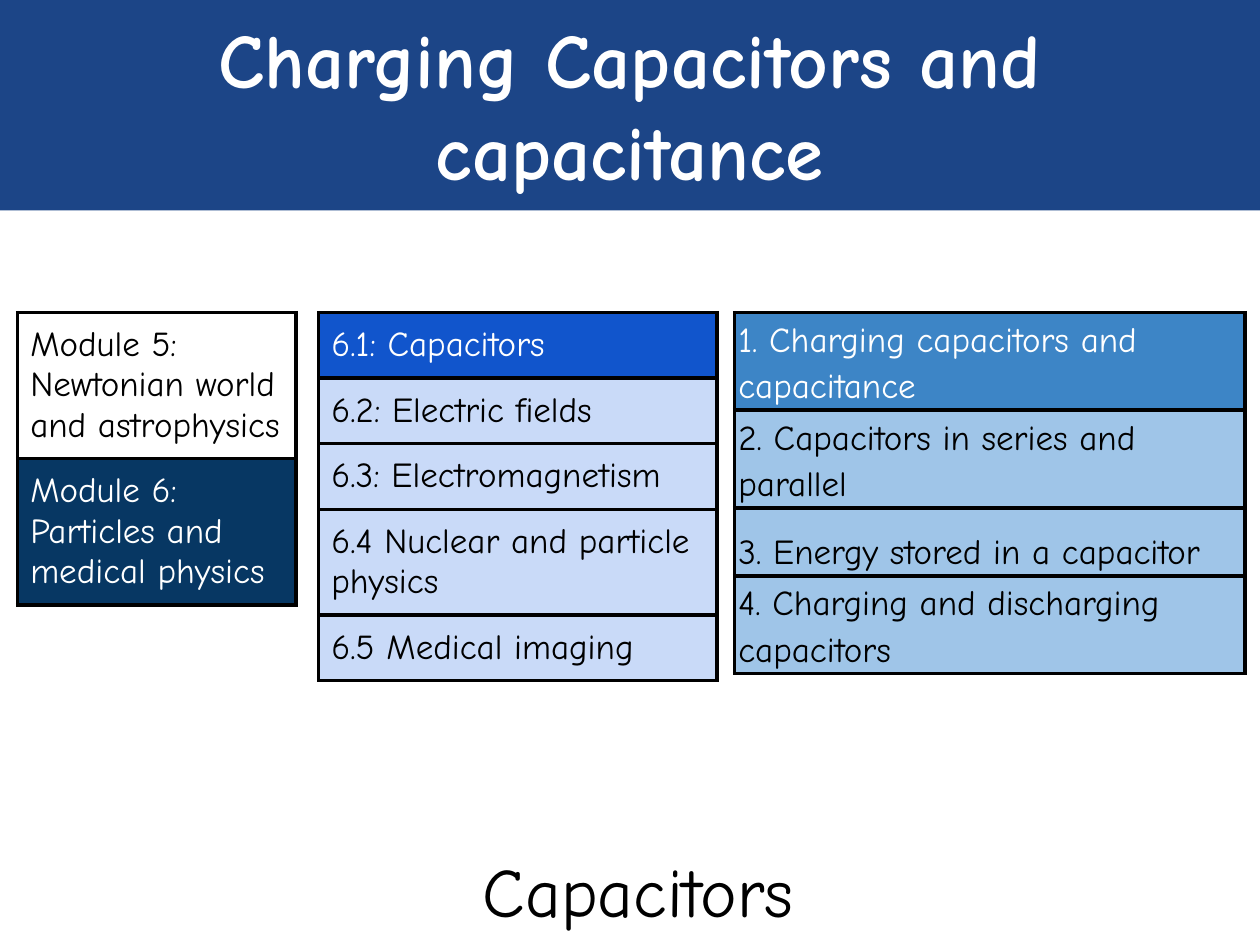
from dataclasses import dataclass

from lxml.etree import SubElement
from pptx import Presentation
from pptx.dml.color import RGBColor
from pptx.enum.text import MSO_ANCHOR, MSO_AUTO_SIZE, PP_ALIGN
from pptx.oxml.ns import qn
from pptx.util import Inches, Pt

FONT_NAME = "Comic Neue"
BLACK = "000000"
WHITE = "FFFFFF"
TABLE_TOP = 2.48
BORDER_WIDTH = 2.25


@dataclass(frozen=True)
class Row:
    text: str
    height: float
    fill: str
    color: str = BLACK


@dataclass(frozen=True)
class TopicTable:
    left: float
    width: float
    rows: tuple[Row, ...]
    margin_x: float = 0.1
    margin_y: float = 0.1
    anchor: MSO_ANCHOR = MSO_ANCHOR.TOP
    line_spacing: float = 1.0


TABLES = (
    TopicTable(0.14, 2.21, (
        Row("Module 5: Newtonian world and astrophysics", 0.42, WHITE),
        Row("Module 6: Particles and medical physics", 0.42, "073763", WHITE),
    )),
    TopicTable(2.53, 3.16, (
        Row("6.1: Capacitors", 0.49, "1155CC", WHITE),
        Row("6.2: Electric fields", 0.42, "C9DAF8"),
        Row("6.3: Electromagnetism", 0.42, "C9DAF8"),
        Row("6.4 Nuclear and particle physics", 0.42, "C9DAF8"),
        Row("6.5 Medical imaging", 0.42, "C9DAF8"),
    )),
    TopicTable(5.83, 4.05, (
        Row("1. Charging capacitors and capacitance", 0.5, "3D85C6", WHITE),
        Row("2. Capacitors in series and parallel", 0.42, "9FC5E8"),
        Row("3. Energy stored in a capacitor", 0.54, "9FC5E8"),
        Row("4. Charging and discharging capacitors", 0.42, "9FC5E8"),
    ), 0.03, 0.02, MSO_ANCHOR.BOTTOM, 1.15),
)


def set_fill(target, color: str) -> None:
    target.fill.solid()
    target.fill.fore_color.rgb = RGBColor.from_string(color)


def set_text(text_frame, text: str, size: float, color: str, bold: bool = False):
    text_frame.text = text
    paragraph = text_frame.paragraphs[0]
    font = paragraph.runs[0].font
    font.name = FONT_NAME
    font.size = Pt(size)
    font.bold = bold
    font.color.rgb = RGBColor.from_string(color)
    return paragraph


def set_margins(target, horizontal: float, vertical: float) -> None:
    target.margin_left = target.margin_right = Inches(horizontal)
    target.margin_top = target.margin_bottom = Inches(vertical)


def add_borders(cell) -> None:
    properties = cell._tc.get_or_add_tcPr()
    for side in ("L", "R", "T", "B"):
        line = SubElement(properties, qn(f"a:ln{side}"), w=str(Pt(BORDER_WIDTH)))
        solid_fill = SubElement(line, qn("a:solidFill"))
        SubElement(solid_fill, qn("a:srgbClr"), val=BLACK)


def add_topic_table(slide, topic: TopicTable) -> None:
    height = sum(row.height for row in topic.rows)
    table = slide.shapes.add_table(
        len(topic.rows), 1, Inches(topic.left), Inches(TABLE_TOP),
        Inches(topic.width), Inches(height),
    ).table
    table.first_row = False
    table.horz_banding = False
    for index, row in enumerate(topic.rows):
        table.rows[index].height = Inches(row.height)
        cell = table.cell(index, 0)
        add_borders(cell)
        set_fill(cell, row.fill)
        set_margins(cell, topic.margin_x, topic.margin_y)
        cell.vertical_anchor = topic.anchor
        paragraph = set_text(cell.text_frame, row.text, 20, row.color)
        paragraph.line_spacing = topic.line_spacing


def format_heading(shape, text: str, size: float, color: str,
                   margin_y: float, anchor: MSO_ANCHOR, bold: bool = False) -> None:
    text_frame = shape.text_frame
    text_frame.word_wrap = True
    text_frame.auto_size = MSO_AUTO_SIZE.NONE
    text_frame.vertical_anchor = anchor
    set_margins(text_frame, 0.1, margin_y)
    set_text(text_frame, text, size, color, bold).alignment = PP_ALIGN.CENTER


def add_module_heading(slide) -> None:
    heading = slide.shapes.add_textbox(
        Inches(2.27), Inches(6.75), Inches(5.59), Inches(0.62))
    set_fill(heading, WHITE)
    color = heading.fill._xPr.find(f".//{qn('a:srgbClr')}")
    SubElement(color, qn("a:alpha"), val="59000")
    format_heading(heading, "Capacitors", 39.6, BLACK, 0.05, MSO_ANCHOR.MIDDLE)


def format_title(slide) -> None:
    title = slide.shapes.title
    title.left, title.top = Inches(0), Inches(-0.01)
    title.width, title.height = Inches(10), Inches(1.68)
    set_fill(title, "1C4587")
    format_heading(title, "Charging Capacitors and capacitance", 44, WHITE,
                   0.1, MSO_ANCHOR.TOP, bold=True)


def main() -> None:
    presentation = Presentation()
    presentation.slide_width = Inches(10)
    presentation.slide_height = Inches(7.5)
    slide = presentation.slides.add_slide(presentation.slide_layouts[5])
    format_title(slide)
    for topic in TABLES:
        add_topic_table(slide, topic)
    add_module_heading(slide)
    presentation.save("out.pptx")


if __name__ == "__main__":
    main()
